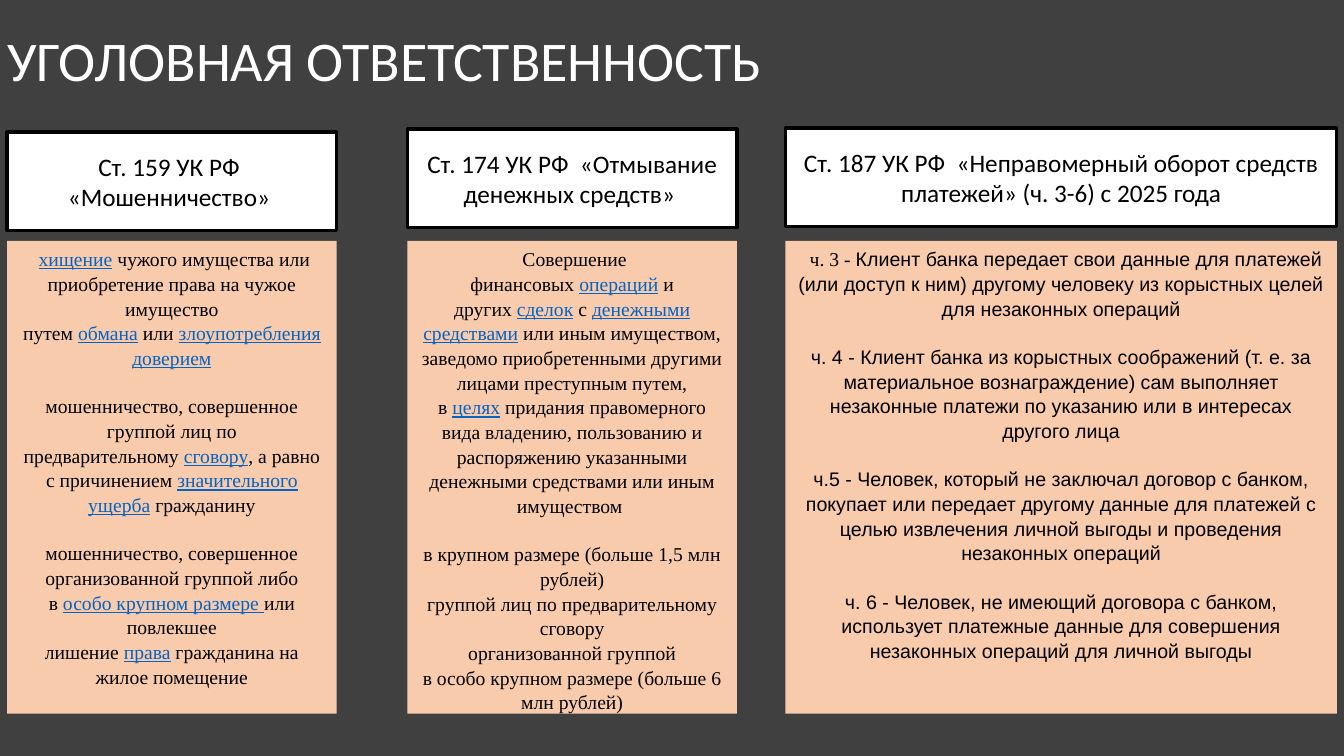
from pptx import Presentation
from pptx.dml.color import RGBColor
from pptx.enum.shapes import MSO_SHAPE
from pptx.enum.text import MSO_ANCHOR, MSO_AUTO_SIZE, PP_ALIGN
from pptx.util import Inches, Pt

RECT = MSO_SHAPE.RECTANGLE
TOP, MIDDLE = MSO_ANCHOR.TOP, MSO_ANCHOR.MIDDLE
LEFT, CENTER = PP_ALIGN.LEFT, PP_ALIGN.CENTER
NO_FIT = MSO_AUTO_SIZE.NONE

BACKGROUND, WHITE, BLACK, PEACH, BLUE = "404040", "FFFFFF", "000000", "F8CBAD", "0563C1"
BODY_TOP, BODY_H, HEAD_H = 2.39, 4.69, 0.98
LINE = 1.05
GAP = Pt(16.9)

TITLE = {"name": "Calibri", "size": Pt(40), "color": WHITE}
HEAD = {"name": "Calibri", "size": Pt(18), "color": BLACK}
SERIF = {"name": "Times New Roman", "size": Pt(14), "color": BLACK}
SANS = {**SERIF, "name": "Arial"}
LINK = {**SERIF, "color": BLUE, "underline": True}

# "~" is a no-break space, [ ] encloses text in the column's second format.
# Each body is a list of blocks, each block a list of paragraphs.
COLUMNS = [
    {"left": 0.07, "width": 3.27, "head_top": 1.31, "formats": (SERIF, LINK),
     "head": "Ст. 159 УК РФ  «Мошенничество»~",
     "body": [
         ["~[хищение]~чужого имущества или приобретение права на чужое имущество "
          "путем~[обмана]~или~[злоупотребления доверием]"],
         ["мошенничество, совершенное группой лиц по предварительному~[сговору], "
          "а равно с причинением~[значительного ущерба]~гражданину"],
         ["мошенничество, совершенное организованной группой либо "
          "в~[особо крупном размере ]или повлекшее лишение~[права]~гражданина "
          "на жилое помещение"],
     ]},
    {"left": 4.04, "width": 3.27, "head_top": 1.28, "formats": (SERIF, LINK),
     "head": "Ст. 174 УК РФ  «Отмывание денежных средств»~",
     "body": [
         ["~Совершение финансовых~[операций]~и других~[сделок]~с~[денежными средствами]"
          "~или иным имуществом, заведомо приобретенными другими лицами преступным "
          "путем, в~[целях]~придания правомерного вида владению, пользованию и "
          "распоряжению указанными денежными средствами или иным имуществом~"],
         ["в крупном размере (больше 1,5 млн рублей)",
          "группой лиц по предварительному сговору",
          "организованной группой",
          "в особо крупном размере (больше 6 млн рублей)"],
     ]},
    {"left": 7.79, "width": 5.47, "head_top": 1.27, "formats": (SANS, SERIF),
     "head": "Ст. 187 УК РФ  «Неправомерный оборот средств платежей»~(ч. 3-6) с 2025 года",
     "body": [
         ["[~~ч. 3 - ]Клиент банка передает свои данные для платежей (или доступ к ним) "
          "другому человеку из корыстных целей для незаконных операций"],
         ["ч. 4 - Клиент банка из корыстных соображений (т. е. за материальное "
          "вознаграждение) сам выполняет незаконные платежи по указанию или в "
          "интересах другого лица"],
         ["ч.5 - Человек, который не заключал договор с банком, покупает или передает "
          "другому данные для платежей с целью извлечения личной выгоды и проведения "
          "незаконных операций"],
         ["ч. 6 - Человек, не имеющий договора с банком, использует платежные данные "
          "для совершения незаконных операций для личной выгоды"],
     ]},
]


def rgb(color):
    return RGBColor.from_string(color)


def add_run(p, text, fmt):
    r = p.add_run()
    r.text = text.replace("~", chr(160))
    for key, value in fmt.items():
        if key == "color":
            r.font.color.rgb = rgb(value)
        else:
            setattr(r.font, key, value)


def add_marked_text(p, text, formats):
    for i, part in enumerate(text.replace("]", "[").split("[")):
        if part:
            add_run(p, part, formats[i % 2])


def add_box(s, box, fill, anchor):
    sp = s.shapes.add_shape(RECT, *map(Inches, box))
    sp.shadow.inherit = False
    sp.fill.solid()
    sp.fill.fore_color.rgb = rgb(fill)
    sp.line.fill.background()
    sp.text_frame.word_wrap = True
    sp.text_frame.vertical_anchor = anchor
    return sp


def add_title(s, box, text):
    sp = s.shapes.title
    sp.left, sp.top, sp.width, sp.height = map(Inches, box)
    tf = sp.text_frame
    for key, value in {"auto_size": NO_FIT, "word_wrap": True,
                       "vertical_anchor": MIDDLE}.items():
        setattr(tf, key, value)
    p = tf.paragraphs[0]
    p.alignment = LEFT
    add_run(p, text, TITLE)


def add_heading(s, box, text):
    sp = add_box(s, box, WHITE, MIDDLE)
    sp.line.color.rgb = rgb(BLACK)
    sp.line.width = Pt(2.25)
    p = sp.text_frame.paragraphs[0]
    p.alignment = CENTER
    add_run(p, text, HEAD)


def add_body(s, box, blocks, formats):
    tf = add_box(s, box, PEACH, TOP).text_frame
    for b, block in enumerate(blocks):
        for i, text in enumerate(block):
            first = b == 0 and i == 0
            p = tf.paragraphs[0] if first else tf.add_paragraph()
            p.alignment = CENTER
            p.line_spacing = LINE
            p.space_before = GAP if b and i == 0 else Pt(0)
            add_marked_text(p, text, formats)


def add_column(s, column):
    left, width = column["left"], column["width"]
    add_body(s, (left, BODY_TOP, width, BODY_H), column["body"], column["formats"])
    add_heading(s, (left, column["head_top"], width, HEAD_H), column["head"])


def main():
    prs = Presentation()
    prs.slide_width, prs.slide_height = Inches(13.33), Inches(7.5)
    s = prs.slides.add_slide(prs.slide_layouts[5])
    s.background.fill.solid()
    s.background.fill.fore_color.rgb = rgb(BACKGROUND)
    add_title(s, (-0.03, 0.24, 8.13, 0.7), "УГОЛОВНАЯ ОТВЕТСТВЕННОСТЬ")
    for column in COLUMNS:
        add_column(s, column)
    prs.save("out.pptx")


if __name__ == "__main__":
    main()
